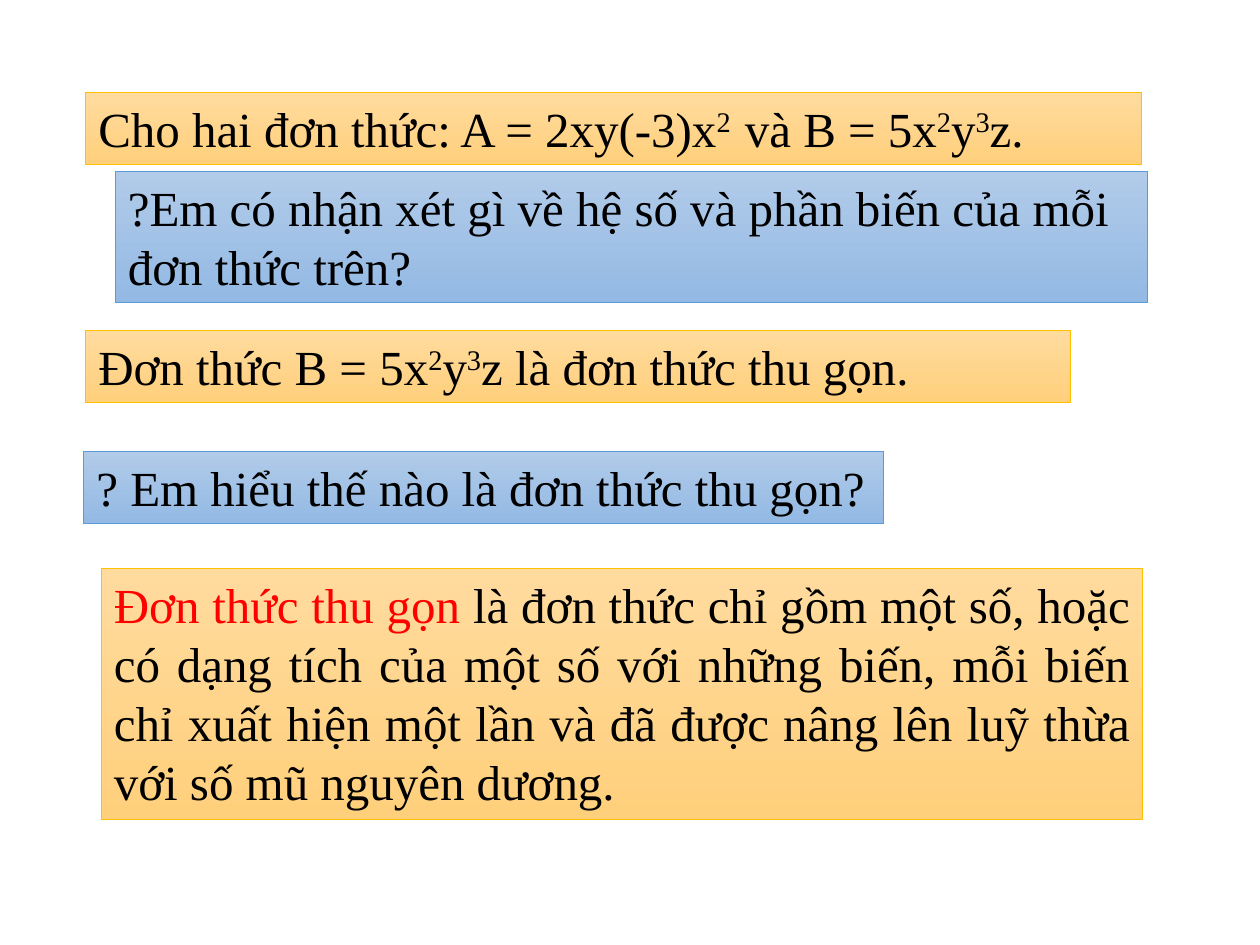
import pptx
import pptx.dml.color
import pptx.enum.shapes
import pptx.enum.text
import pptx.util

Pt = pptx.util.Pt
RGBColor = pptx.dml.color.RGBColor
ALIGN = pptx.enum.text.PP_ALIGN

BLACK = RGBColor(0x00, 0x00, 0x00)
RED = RGBColor(0xFF, 0x00, 0x00)
GOLD_TOP = RGBColor(0xFF, 0xDB, 0x9E)
GOLD_BOTTOM = RGBColor(0xFF, 0xD0, 0x7C)
GOLD_LINE = RGBColor(0xFF, 0xC0, 0x00)
BLUE_TOP = RGBColor(0xB1, 0xCB, 0xE9)
BLUE_BOTTOM = RGBColor(0x93, 0xB9, 0xE4)
BLUE_LINE = RGBColor(0x5B, 0x9B, 0xD5)

STATEMENT = {"stops": (GOLD_TOP, GOLD_BOTTOM), "line": GOLD_LINE}
QUESTION = {"stops": (BLUE_TOP, BLUE_BOTTOM), "line": BLUE_LINE}

FONT_FORMAT = {"name": "Times New Roman", "size": Pt(28)}
FRAME_FORMAT = {
    "word_wrap": True,
    "auto_size": pptx.enum.text.MSO_AUTO_SIZE.SHAPE_TO_FIT_TEXT,
    "vertical_anchor": pptx.enum.text.MSO_ANCHOR.TOP,
}
PLAIN = {"color": BLACK}
TERM = {"color": RED}
POWER = {"color": BLACK, "baseline": "30000"}


def apply_format(target, values):
    for name, value in values.items():
        setattr(target, name, value)


def add_span(para, text, style):
    span = para.add_run()
    span.text = text
    apply_format(span.font, FONT_FORMAT)
    span.font.color.rgb = style["color"]
    if "baseline" in style:
        span._r.get_or_add_rPr().set("baseline", style["baseline"])


def add_panel(page, box, look, spans, alignment=ALIGN.LEFT):
    panel = page.shapes.add_shape(
        pptx.enum.shapes.MSO_SHAPE.RECTANGLE, *(Pt(length) for length in box)
    )
    panel.shadow.inherit = False
    panel.fill.gradient()
    panel.fill.gradient_angle = 270
    for stop, color in zip(panel.fill.gradient_stops, look["stops"]):
        stop.color.rgb = color
    panel.line.color.rgb = look["line"]
    panel.line.width = Pt(0.5)
    apply_format(panel.text_frame, FRAME_FORMAT)
    para = panel.text_frame.paragraphs[0]
    para.alignment = alignment
    for text, style in spans:
        add_span(para, text, style)


def build_page(page):
    add_panel(page, (49.1, 52.8, 603.4, 41.2), STATEMENT, [
        ("Cho hai đơn thức: A = 2xy(-3)x", PLAIN),
        ("2  ", POWER),
        ("và B = 5x", PLAIN),
        ("2", POWER),
        ("y", PLAIN),
        ("3", POWER),
        ("z.", PLAIN),
    ])
    add_panel(page, (66, 98, 589.7, 75.1), QUESTION, [
        ("?Em có nhận xét gì về hệ số và phần biến của mỗi đơn thức trên?", PLAIN),
    ])
    add_panel(page, (49.1, 188.8, 562.8, 41.2), STATEMENT, [
        ("Đơn thức B = 5x", PLAIN),
        ("2", POWER),
        ("y", PLAIN),
        ("3", POWER),
        ("z là đơn thức thu gọn.", PLAIN),
    ])
    add_panel(page, (48, 258, 457, 41.2), QUESTION, [
        ("? Em hiểu thế nào là đơn thức thu gọn?", PLAIN),
    ])
    add_panel(page, (58, 325, 595, 143), STATEMENT, [
        ("Đơn thức thu gọn ", TERM),
        ("là đơn thức chỉ gồm một số, hoặc có dạng tích của một số với "
         "những biến, mỗi biến chỉ xuất hiện một lần và đã được nâng lên "
         "luỹ thừa với số mũ nguyên dương.", PLAIN),
    ], ALIGN.JUSTIFY)


def main():
    deck = pptx.Presentation()
    apply_format(deck, {"slide_width": Pt(720), "slide_height": Pt(540)})
    build_page(deck.slides.add_slide(deck.slide_layouts[6]))
    deck.save("out.pptx")


if __name__ == "__main__":
    main()
